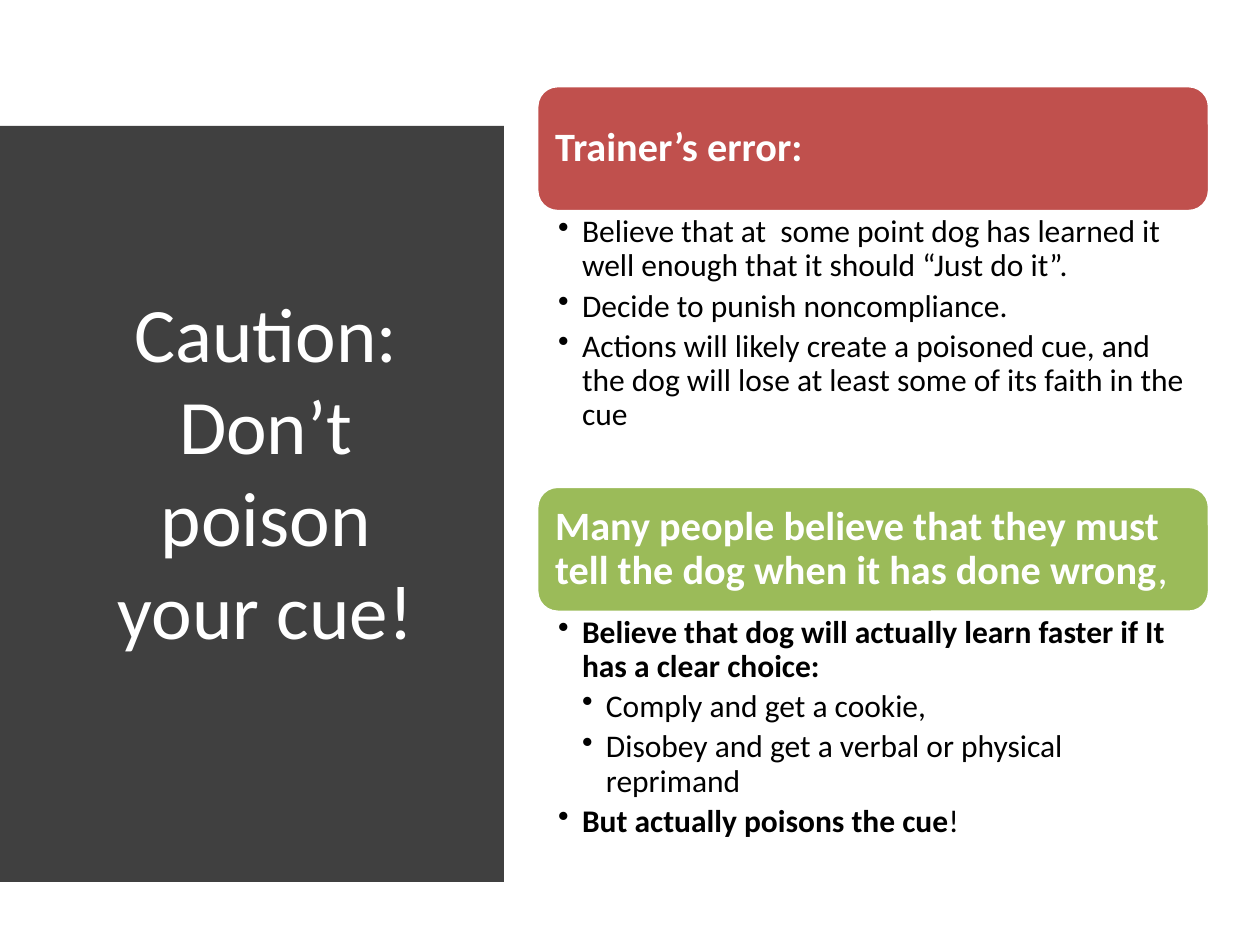
from dataclasses import dataclass

from lxml import etree
from pptx import Presentation
from pptx.dml.color import RGBColor
from pptx.enum.shapes import MSO_SHAPE
from pptx.enum.text import MSO_ANCHOR, PP_ALIGN
from pptx.oxml.ns import qn
from pptx.util import Inches, Pt

ROUNDED = MSO_SHAPE.ROUNDED_RECTANGLE
TOP, MIDDLE = MSO_ANCHOR.TOP, MSO_ANCHOR.MIDDLE
LEFT, CENTER = PP_ALIGN.LEFT, PP_ALIGN.CENTER


@dataclass(frozen=True)
class Theme:
    font: str = "Calibri"
    white: str = "FFFFFF"
    black: str = "000000"
    dark: str = "404040"
    red: str = "C0504D"
    green: str = "9BBB59"
    title_size: int = 44
    heading_size: int = 23
    body_size: int = 18


@dataclass(frozen=True)
class Box:
    left: float
    top: float
    width: float
    height: float

    def emu(self):
        return [Inches(v) for v in (self.left, self.top, self.width, self.height)]


THEME = Theme()
SLIDE_WIDTH, SLIDE_HEIGHT = 10, 7.5
BULLET_INDENT = 0.19
HEADING_HEIGHT = 1
BULGE = 0.18
CURVE_STEPS = 40

# Each bullet is (level, runs); each run is (words, bold)
SECTIONS = [
    (THEME.red, Box(4.26, 0.68, 5.34, 3.18),
     [("Trainer’s error:", True)],
     [(1, [("Believe that at  some point dog has learned it well enough "
            "that it should “Just do it”.", False)]),
      (1, [("Decide to punish noncompliance.", False)]),
      (1, [("Actions will likely create a poisoned cue, and the dog will "
            "lose at least some of its faith in the cue", False)])]),
    (THEME.green, Box(4.26, 3.86, 5.34, 2.93),
     [("Many people believe that they must tell the dog when it has done wrong", True),
      (",", False)],
     [(1, [("Believe that dog will actually learn faster if It has a clear choice:", True)]),
      (2, [("Comply and get a cookie,", False)]),
      (2, [("Disobey and get a verbal or physical reprimand", False)]),
      (1, [("But actually poisons the cue", True), ("!", False)])]),
]


def apply_format(target, values):
    for name, value in values.items():
        setattr(target, name, value)


def set_frame(frame, anchor, insets):
    sides = ("margin_left", "margin_top", "margin_right", "margin_bottom")
    margins = {side: Inches(inset) for side, inset in zip(sides, insets)}
    apply_format(frame, {"word_wrap": True, "vertical_anchor": anchor, **margins})


def write_runs(paragraph, runs, size, color):
    for words, bold in runs:
        run = paragraph.add_run()
        run.text = words
        apply_format(run.font, {"name": THEME.font, "size": Pt(size), "bold": bold})
        run.font.color.rgb = RGBColor.from_string(color)


def add_bullet(paragraph, level):
    properties = paragraph._p.get_or_add_pPr()
    properties.set("marL", str(Inches(BULLET_INDENT * level)))
    properties.set("indent", str(-Inches(BULLET_INDENT)))
    etree.SubElement(properties, qn("a:buChar")).set("char", "•")


def add_title_panel(slide, box):
    # Dark panel whose right side bows outwards as a parabola
    edge = box.left + box.width - BULGE
    curve = []
    for step in range(CURVE_STEPS + 1):
        share = step / CURVE_STEPS
        bow = BULGE * (1 - (2 * share - 1) ** 2)
        curve.append((edge + bow, box.top + share * box.height))
    builder = slide.shapes.build_freeform(box.left, box.top, scale=Inches(1))
    builder.add_line_segments(curve + [(box.left, box.top + box.height)], close=True)
    panel = builder.convert_to_shape()
    panel.shadow.inherit = False
    panel.fill.solid()
    panel.fill.fore_color.rgb = RGBColor.from_string(THEME.dark)
    panel.line.fill.background()

    # Title, centred in the panel
    title_box = Box(box.left + 0.31, box.top + 0.59, 2.8, 5.24)
    title = slide.shapes.add_textbox(*title_box.emu()).text_frame
    set_frame(title, MIDDLE, (0.1, 0.05, 0.1, 0.05))
    paragraph = title.paragraphs[0]
    paragraph.alignment = CENTER
    write_runs(paragraph, [("Caution: Don’t poison your cue!", False)],
               THEME.title_size, THEME.white)


def add_section(slide, box, color, heading_runs, bullets):
    # Rounded heading bar
    heading_box = Box(box.left, box.top, box.width, HEADING_HEIGHT)
    heading = slide.shapes.add_shape(ROUNDED, *heading_box.emu())
    heading.shadow.inherit = False
    heading.fill.solid()
    heading.fill.fore_color.rgb = RGBColor.from_string(color)
    heading.line.color.rgb = RGBColor.from_string(THEME.white)
    heading.line.width = Pt(2)
    set_frame(heading.text_frame, MIDDLE, (0.1, 0.1, 0.1, 0.1))
    paragraph = heading.text_frame.paragraphs[0]
    apply_format(paragraph, {"alignment": LEFT, "line_spacing": 0.9})
    write_runs(paragraph, heading_runs, THEME.heading_size, THEME.white)

    # Bullets below the bar
    body_box = Box(box.left, box.top + HEADING_HEIGHT, box.width, box.height - HEADING_HEIGHT)
    body = slide.shapes.add_textbox(*body_box.emu()).text_frame
    set_frame(body, TOP, (0.17, 0.03, 0.18, 0.03))
    for index, (level, runs) in enumerate(bullets):
        paragraph = body.add_paragraph() if index else body.paragraphs[0]
        apply_format(paragraph, {"level": level, "alignment": LEFT, "line_spacing": 0.9,
                                 "space_after": Pt(0.2 * THEME.body_size)})
        add_bullet(paragraph, level)
        write_runs(paragraph, runs, THEME.body_size, THEME.black)


def main():
    deck = Presentation()
    deck.slide_width, deck.slide_height = Inches(SLIDE_WIDTH), Inches(SLIDE_HEIGHT)
    slide = deck.slides.add_slide(deck.slide_layouts[6])
    add_title_panel(slide, Box(0.4, 0.52, 3.59, 6.44))
    for color, box, heading_runs, bullets in SECTIONS:
        add_section(slide, box, color, heading_runs, bullets)
    deck.save("out.pptx")


if __name__ == "__main__":
    main()
